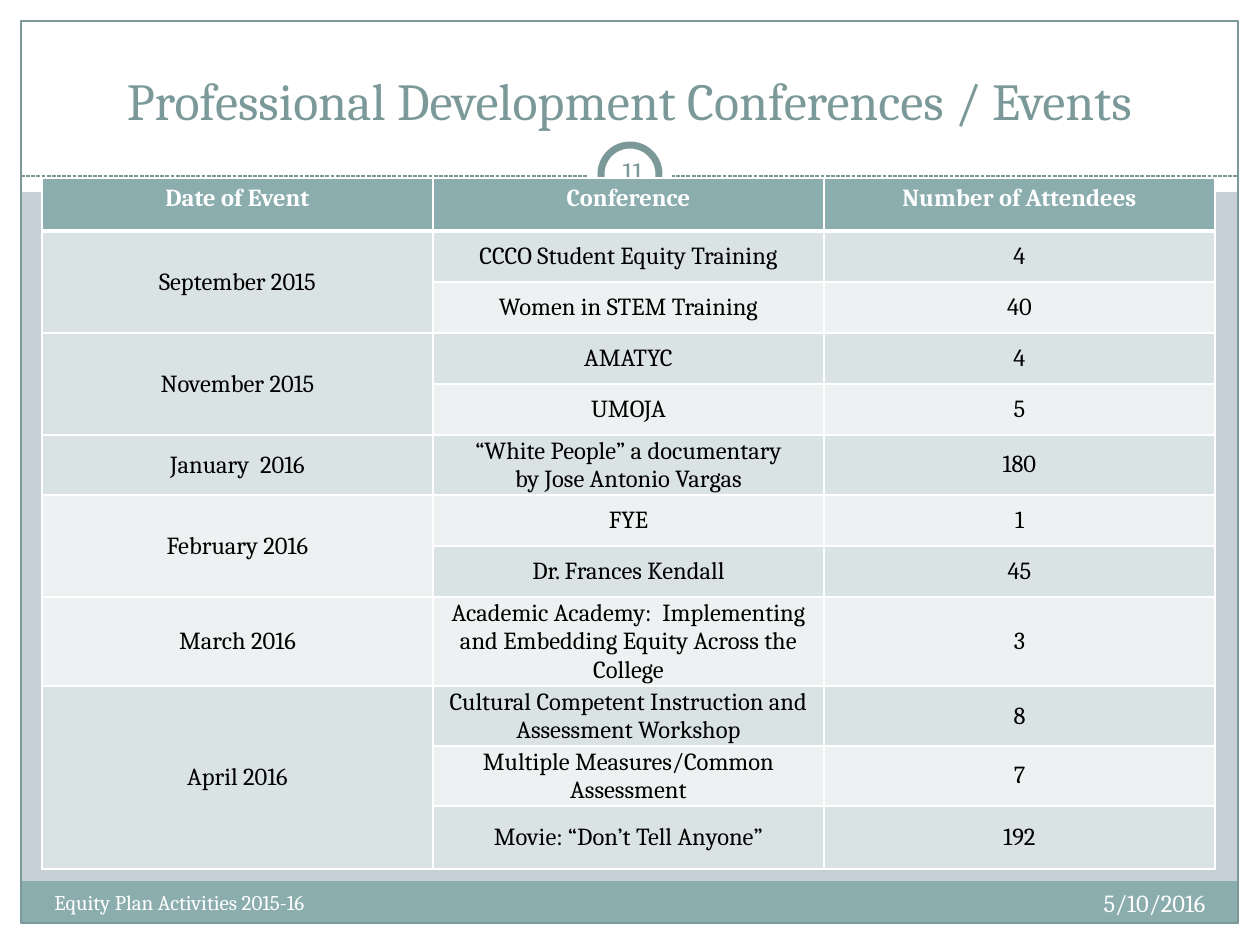
from lxml.etree import SubElement
from pptx import Presentation
from pptx.dml.color import RGBColor
from pptx.enum.dml import MSO_LINE
from pptx.enum.shapes import MSO_CONNECTOR, MSO_SHAPE
from pptx.enum.text import MSO_ANCHOR, PP_ALIGN
from pptx.oxml import parse_xml
from pptx.oxml.ns import nsdecls, qn
from pptx.util import Pt

WIDTH, HEIGHT = 1260, 945
EMU_PER_PX = 914400 / 126
FONT = "Cambria"
WHITE, BLACK, TEAL, DARK_TEAL = "FFFFFF", "000000", "8CADAE", "7C999A"
BACKGROUND, BAND_DARK, BAND_LIGHT = "C5D1D7", "DAE3E3", "EEF1F2"

HEADERS = ["Date of Event", "Conference", "Number of Attendees"]
EVENTS = [
    ("September 2015", [("CCCO Student Equity Training", 4),
                        ("Women in STEM Training", 40)]),
    ("November 2015", [("AMATYC", 4), ("UMOJA", 5)]),
    ("January  2016", [("“White People” a documentary\nby Jose Antonio Vargas", 180)]),
    ("February 2016", [("FYE", 1), ("Dr. Frances Kendall", 45)]),
    ("March 2016", [("Academic Academy:  Implementing and Embedding Equity "
                     "Across the College", 3)]),
    ("April 2016", [("Cultural Competent Instruction and Assessment Workshop", 8),
                    ("Multiple Measures/Common Assessment", 7),
                    ("Movie: “Don’t Tell Anyone”", 192)]),
]
TABLE_LEFT, TABLE_TOP, COLUMN_WIDTH = 42, 178, 391
HEADER_HEIGHT, ROW_HEIGHT, LAST_ROW_HEIGHT = 53, 51, 63

# left, top, width, height, fill, line colour, line width in points
FRAME_SHAPES = [
    (MSO_SHAPE.RECTANGLE, 0, 924, WIDTH, 21, WHITE, None, 0),
    (MSO_SHAPE.RECTANGLE, 0, 0, WIDTH, 192, WHITE, None, 0),
    (MSO_SHAPE.RECTANGLE, 0, 0, 21, HEIGHT, WHITE, None, 0),
    (MSO_SHAPE.RECTANGLE, 1239, 0, 21, HEIGHT, WHITE, None, 0),
    (MSO_SHAPE.RECTANGLE, 21, 881, 1217, 43, TEAL, None, 0),
    (MSO_SHAPE.RECTANGLE, 21, 21, 1217, 902, None, DARK_TEAL, 0.75),
]
NUMBER_BADGE = [
    (MSO_SHAPE.OVAL, 588, 132, 84, 84, WHITE, None, 0),
    (MSO_SHAPE.OVAL, 601, 145, 58, 58, WHITE, DARK_TEAL, 4),
]
DIVIDER_Y = 176

# text, left, top, width, height, size, colour, alignment, anchor, margin
TEXTS = [
    ("Professional Development Conferences / Events", 42, 32, 1176, 105, 29.7,
     DARK_TEAL, PP_ALIGN.CENTER, MSO_ANCHOR.BOTTOM, None),
    ("5/10/2016", 798, 882, 420, 50, 14, WHITE, PP_ALIGN.RIGHT, MSO_ANCHOR.TOP, None),
    ("Equity Plan Activities 2015-16", 42, 883, 494, 50, 12, WHITE,
     PP_ALIGN.LEFT, MSO_ANCHOR.TOP, None),
    ("11", 601, 141, 63, 60, 16, DARK_TEAL, PP_ALIGN.CENTER, MSO_ANCHOR.MIDDLE, 6),
]


def px(length):
    return round(length * EMU_PER_PX)


def color(hex_string):
    return RGBColor.from_string(hex_string)


def set_text(text_frame, text, size, hex_string, alignment, bold=False):
    text_frame.text = text
    for paragraph in text_frame.paragraphs:
        paragraph.alignment = alignment
        for run in paragraph.runs:
            run.font.name = FONT
            run.font.size = Pt(size)
            run.font.bold = bold
            run.font.color.rgb = color(hex_string)


def add_shape(slide, kind, left, top, width, height, fill, line, line_width):
    shape = slide.shapes.add_shape(kind, px(left), px(top), px(width), px(height))
    shape.shadow.inherit = False
    if fill:
        shape.fill.solid()
        shape.fill.fore_color.rgb = color(fill)
    else:
        shape.fill.background()
    if line:
        shape.line.color.rgb = color(line)
        shape.line.width = Pt(line_width)
    else:
        shape.line.fill.background()


def add_divider(slide):
    divider = slide.shapes.add_connector(
        MSO_CONNECTOR.STRAIGHT, px(21), px(DIVIDER_Y), px(1239), px(DIVIDER_Y))
    divider.line.color.rgb = color(DARK_TEAL)
    divider.line.width = Pt(0.75)
    divider.line.dash_style = MSO_LINE.SQUARE_DOT
    SubElement(divider._element.spPr, qn("a:effectLst"))


def add_text(slide, text, left, top, width, height, size, hex_string,
             alignment, anchor, margin):
    box = slide.shapes.add_textbox(px(left), px(top), px(width), px(height))
    frame = box.text_frame
    frame.word_wrap = True
    frame.vertical_anchor = anchor
    if margin is not None:
        frame.margin_left = frame.margin_right = px(margin)
        frame.margin_top = frame.margin_bottom = px(margin)
    set_text(frame, text, size, hex_string, alignment)


def set_borders(cell, top, bottom):
    """Draw white borders: 1 point at the sides, the given points above and below."""
    widths = {"lnL": 1, "lnR": 1, "lnT": top, "lnB": bottom}
    properties = cell._tc.get_or_add_tcPr()
    for position, (tag, width) in enumerate(widths.items()):
        properties.insert(position, parse_xml(
            f'<a:{tag} {nsdecls("a")} w="{Pt(width)}"><a:solidFill>'
            f'<a:srgbClr val="{WHITE}"/></a:solidFill></a:{tag}>'))


def fill_cell(cell, text, hex_string, bold=False):
    set_text(cell.text_frame, text, 14, hex_string, PP_ALIGN.CENTER, bold)


def add_event_table(slide):
    row_count = 1 + sum(len(conferences) for _, conferences in EVENTS)
    heights = [HEADER_HEIGHT] + [ROW_HEIGHT] * (row_count - 2) + [LAST_ROW_HEIGHT]
    table = slide.shapes.add_table(
        row_count, len(HEADERS), px(TABLE_LEFT), px(TABLE_TOP),
        px(COLUMN_WIDTH * len(HEADERS)), px(sum(heights))).table
    for column in table.columns:
        column.width = px(COLUMN_WIDTH)
    for row_index, height in enumerate(heights):
        table.rows[row_index].height = px(height)
        band = BAND_DARK if row_index % 2 else BAND_LIGHT
        for column_index in range(len(HEADERS)):
            cell = table.cell(row_index, column_index)
            cell.fill.solid()
            cell.fill.fore_color.rgb = color(band if row_index else TEAL)
            set_borders(cell, top=3 if row_index == 1 else 1,
                        bottom=1 if row_index else 3)
            if row_index:
                cell.vertical_anchor = MSO_ANCHOR.MIDDLE
                if column_index < 2:
                    cell.margin_left = cell.margin_right = cell.margin_top = px(1)
                    cell.margin_bottom = 0

    for column_index, header in enumerate(HEADERS):
        fill_cell(table.cell(0, column_index), header, WHITE, bold=True)
    row_index = 1
    for date, conferences in EVENTS:
        date_cell = table.cell(row_index, 0)
        if len(conferences) > 1:
            date_cell.merge(table.cell(row_index + len(conferences) - 1, 0))
        fill_cell(date_cell, date, BLACK)
        for conference, attendees in conferences:
            fill_cell(table.cell(row_index, 1), conference, BLACK)
            fill_cell(table.cell(row_index, 2), str(attendees), BLACK)
            row_index += 1


def main():
    presentation = Presentation()
    presentation.slide_width, presentation.slide_height = px(WIDTH), px(HEIGHT)
    slide = presentation.slides.add_slide(presentation.slide_layouts[6])
    slide.background.fill.solid()
    slide.background.fill.fore_color.rgb = color(BACKGROUND)
    for frame_shape in FRAME_SHAPES:
        add_shape(slide, *frame_shape)
    add_divider(slide)
    for circle in NUMBER_BADGE:
        add_shape(slide, *circle)
    for text in TEXTS:
        add_text(slide, *text)
    add_event_table(slide)
    presentation.save("out.pptx")


if __name__ == "__main__":
    main()
